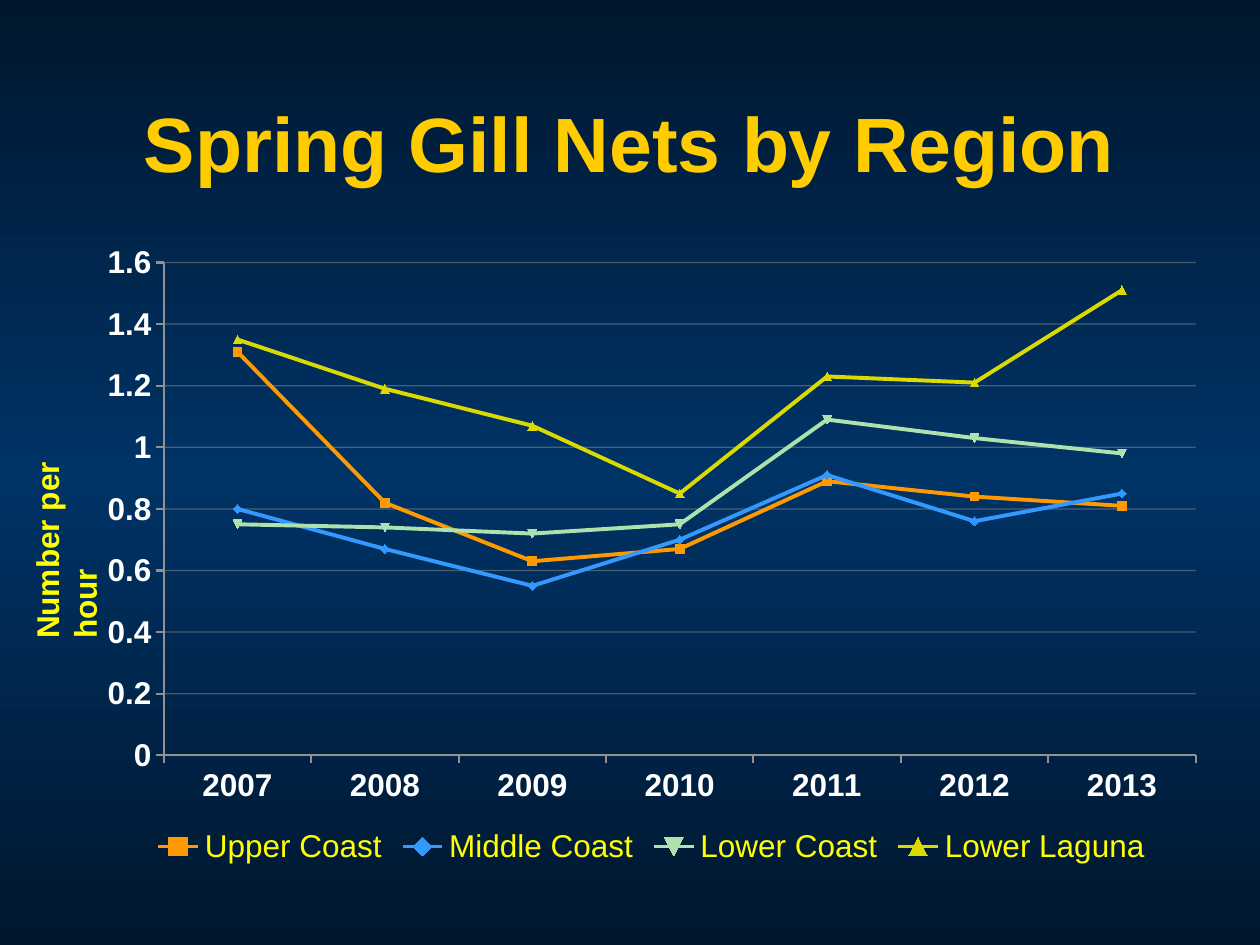
"""Build a slide with a line chart of spring gill net catch rates by region."""
from copy import deepcopy
from dataclasses import dataclass

from lxml import etree
from pptx import Presentation
from pptx.chart.axis import _BaseAxis
from pptx.chart.chart import Chart
from pptx.chart.data import CategoryChartData
from pptx.dml.color import RGBColor
from pptx.enum.chart import XL_CHART_TYPE, XL_LEGEND_POSITION, XL_TICK_MARK
from pptx.enum.text import MSO_ANCHOR, PP_ALIGN
from pptx.oxml import parse_xml
from pptx.oxml.ns import nsdecls, qn
from pptx.slide import Slide
from pptx.util import Inches, Pt

LINE_MARKERS = XL_CHART_TYPE.LINE_MARKERS
LEGEND_BOTTOM = XL_LEGEND_POSITION.BOTTOM
TICK_OUTSIDE = XL_TICK_MARK.OUTSIDE
TICK_NONE = XL_TICK_MARK.NONE
MIDDLE, TOP = MSO_ANCHOR.MIDDLE, MSO_ANCHOR.TOP
CENTER, LEFT = PP_ALIGN.CENTER, PP_ALIGN.LEFT


@dataclass(frozen=True)
class Theme:
    font: str = "Arial"
    title_size: float = 44
    body_size: float = 18
    series_width: float = 2.25
    axis_width: float = 1.25
    grid_width: float = 0.75
    edge: str = "00172E"
    middle: str = "003366"
    title: str = "FFCC00"
    label: str = "FFFF00"
    tick: str = "FFFFFF"
    axis: str = "919191"


@dataclass(frozen=True)
class Label:
    text: str
    box: tuple[float, float, float, float]
    size: float
    color: str
    align: PP_ALIGN = LEFT
    anchor: MSO_ANCHOR = TOP
    direction: str = "horz"


@dataclass(frozen=True)
class Region:
    name: str
    color: str
    rates: tuple[float, ...]


THEME = Theme()
YEARS = [str(year) for year in range(2007, 2014)]
REGIONS = (
    Region("Upper Coast", "FF9900", (1.31, 0.82, 0.63, 0.67, 0.89, 0.84, 0.81)),
    Region("Middle Coast", "3399FF", (0.8, 0.67, 0.55, 0.7, 0.91, 0.76, 0.85)),
    Region("Lower Coast", "ADE2AD", (0.75, 0.74, 0.72, 0.75, 1.09, 1.03, 0.98)),
    Region("Lower Laguna", "DADA00", (1.35, 1.19, 1.07, 0.85, 1.23, 1.21, 1.51)),
)
TITLE = Label("Spring Gill Nets by Region", (0, 0.5, 10, 1.25),
              THEME.title_size, THEME.title, CENTER, MIDDLE)
AXIS_LABEL = Label("Number per hour", (0.17, 3, 0.5, 2.17),
                   THEME.body_size, THEME.label, direction="vert270")
CHART_BOX = (0.67, 1.83, 9, 5.08)
PLOT_LAYOUT = {"x": 0.07, "y": 0.05, "w": 0.91, "h": 0.77}


def rgb(color: str) -> RGBColor:
    return RGBColor.from_string(color)


def style_font(font, size: float, color: str, bold: bool) -> None:
    font.name, font.size, font.bold = THEME.font, Pt(size), bold
    font.color.rgb = rgb(color)


def style_line(line, color: str, width: float) -> None:
    line.color.rgb = rgb(color)
    line.width = Pt(width)


def paint_background(slide: Slide) -> None:
    fill = slide.background.fill
    fill.gradient()
    fill.gradient_angle = 90
    stop_list = next(slide.element.iter(qn("a:gsLst")))
    stop_list.append(deepcopy(stop_list[-1]))
    colors = (THEME.edge, THEME.middle, THEME.edge)
    for stop, position, color in zip(fill.gradient_stops, (0, 0.5, 1), colors):
        stop.position = position
        stop.color.rgb = rgb(color)


def add_label(slide: Slide, label: Label) -> None:
    shape = slide.shapes.add_textbox(*map(Inches, label.box))
    frame = shape.text_frame
    frame.word_wrap = True
    frame.vertical_anchor = label.anchor
    shape.element.txBody.bodyPr.set("vert", label.direction)
    paragraph = frame.paragraphs[0]
    paragraph.text = label.text
    paragraph.alignment = label.align
    style_font(paragraph.font, label.size, label.color, True)


def style_axis(axis: _BaseAxis) -> None:
    axis.major_tick_mark = TICK_OUTSIDE
    axis.minor_tick_mark = TICK_NONE
    style_line(axis.format.line, THEME.axis, THEME.axis_width)
    style_font(axis.tick_labels.font, THEME.body_size, THEME.tick, True)


def style_gridlines(axis: _BaseAxis) -> None:
    line = axis.major_gridlines.format.line
    style_line(line, THEME.axis, THEME.grid_width)
    color = next(axis.major_gridlines.format.element.iter(qn("a:srgbClr"))) \
        if hasattr(axis.major_gridlines.format, "element") \
        else next(axis._element.find(qn("c:majorGridlines")).iter(qn("a:srgbClr")))
    etree.SubElement(color, qn("a:alpha")).set("val", "50000")


def place_plot(chart: Chart) -> None:
    plot_area = next(chart.element.iter(qn("c:plotArea")))
    for old_layout in plot_area.findall(qn("c:layout")):
        plot_area.remove(old_layout)
    layout = parse_xml(f"<c:layout {nsdecls('c')}><c:manualLayout/></c:layout>")
    settings = {"layoutTarget": "inner", "xMode": "edge", "yMode": "edge", **PLOT_LAYOUT}
    for name, value in settings.items():
        etree.SubElement(layout[0], qn(f"c:{name}")).set("val", str(value))
    plot_area.insert(0, layout)


def add_region_chart(slide: Slide) -> None:
    data = CategoryChartData()
    data.categories = YEARS
    for region in REGIONS:
        data.add_series(region.name, region.rates)
    chart = slide.shapes.add_chart(LINE_MARKERS, *map(Inches, CHART_BOX), data).chart
    style_font(chart.font, THEME.body_size, THEME.label, False)
    chart.has_title = False
    chart.has_legend = True
    chart.legend.position = LEGEND_BOTTOM
    chart.legend.include_in_layout = False
    chart.plots[0].vary_by_categories = False
    for axis in (chart.category_axis, chart.value_axis):
        style_axis(axis)
    chart.value_axis.minimum_scale = 0
    chart.value_axis.maximum_scale = 1.6
    chart.value_axis.major_unit = 0.2
    style_gridlines(chart.value_axis)
    place_plot(chart)
    for series, region in zip(chart.plots[0].series, REGIONS):
        series.smooth = False
        style_line(series.format.line, region.color, THEME.series_width)
        marker = series.marker.format
        marker.fill.solid()
        marker.fill.fore_color.rgb = rgb(region.color)
        marker.line.color.rgb = rgb(region.color)


def main() -> None:
    presentation = Presentation()
    presentation.slide_width = Inches(10)
    presentation.slide_height = Inches(7.5)
    slide = presentation.slides.add_slide(presentation.slide_layouts[6])
    paint_background(slide)
    add_label(slide, TITLE)
    add_region_chart(slide)
    add_label(slide, AXIS_LABEL)
    presentation.save("out.pptx")


if __name__ == "__main__":
    main()
